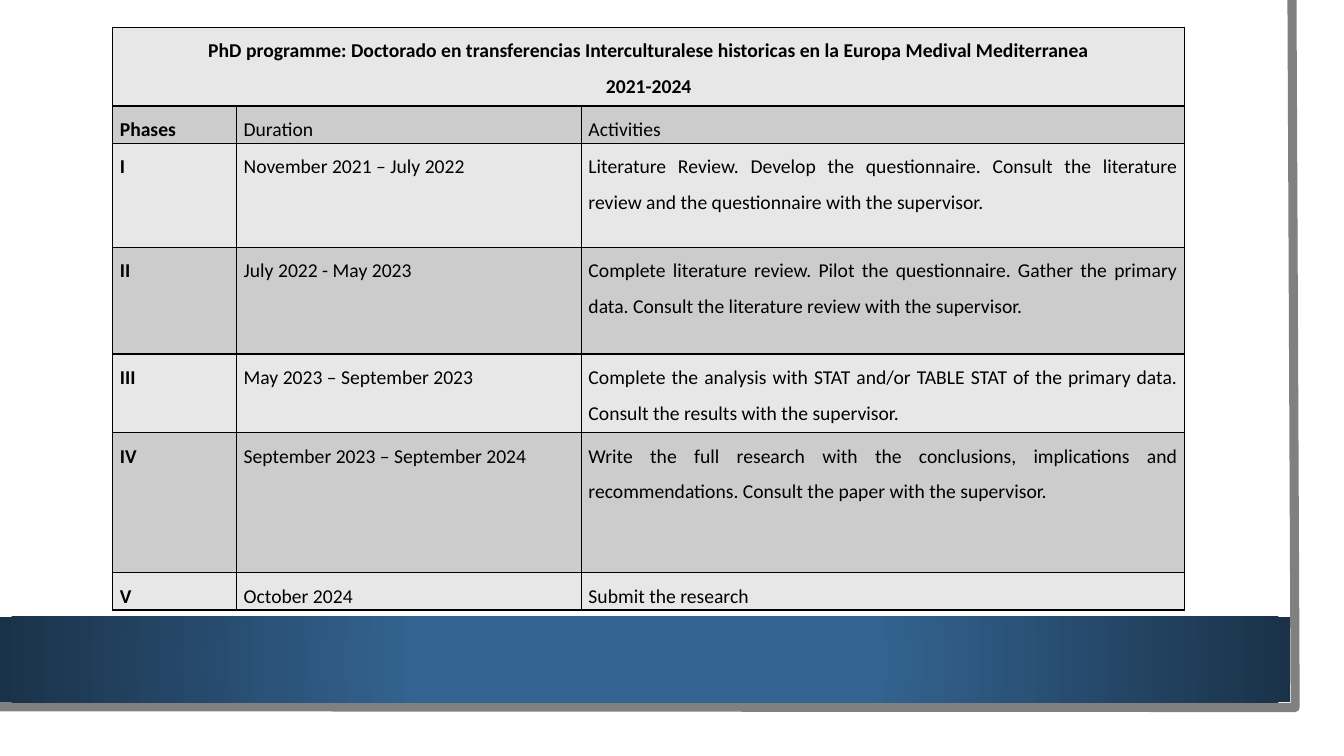
from lxml import etree
from pptx import Presentation
from pptx.dml.color import RGBColor
from pptx.enum.shapes import MSO_SHAPE
from pptx.enum.text import PP_ALIGN
from pptx.oxml import parse_xml
from pptx.oxml.ns import nsdecls, qn
from pptx.util import Cm, Pt

RECTANGLE = MSO_SHAPE.RECTANGLE
CENTER, JUSTIFY = PP_ALIGN.CENTER, PP_ALIGN.JUSTIFY

COLORS = {
    "page": "FFFFFF",
    "frame": "808080",
    "band_middle": "346492",
    "band_edge": "1A3249",
    "light_row": "E7E7E7",
    "dark_row": "CCCCCC",
    "ink": "000000",
}
RGB = {name: RGBColor.from_string(value) for name, value in COLORS.items()}

TITLE = (
    "PhD programme: Doctorado en transferencias Interculturalese historicas "
    "en la Europa Medival Mediterranea\n2021-2024"
)
ROWS = [
    (1.98, [TITLE, "", ""]),
    (0.94, ["Phases", "Duration", "Activities"]),
    (2.62, ["I", "November 2021 – July 2022",
            "Literature Review. Develop the questionnaire. Consult the literature "
            "review and the questionnaire with the supervisor."]),
    (2.69, ["II", "July 2022 - May 2023",
            "Complete literature review. Pilot the questionnaire. Gather the primary "
            "data. Consult the literature review with the supervisor."]),
    (1.98, ["III", "May 2023 – September 2023",
            "Complete the analysis with STAT and/or TABLE STAT of the primary data. "
            "Consult the results with the supervisor."]),
    (3.53, ["IV", "September 2023 – September 2024",
            "Write the full research with the conclusions, implications and "
            "recommendations. Consult the paper with the supervisor."]),
    (0.94, ["V", "October 2024", "Submit the research"]),
]
COLUMN_WIDTHS = [3.12, 8.69, 15.21]


def add_borders(cell):
    properties = cell._tc.get_or_add_tcPr()
    for position, side in enumerate(("lnL", "lnR", "lnT", "lnB")):
        border = parse_xml(
            f'<a:{side} {nsdecls("a")} w="12700"><a:solidFill>'
            f'<a:srgbClr val="{COLORS["ink"]}"/></a:solidFill></a:{side}>'
        )
        properties.insert(position, border)


prs = Presentation()
prs.slide_width, prs.slide_height = Cm(33.87), Cm(19.05)
slide = prs.slides.add_slide(prs.slide_layouts[6])
shapes = slide.shapes

# White page with a grey edge on the right and bottom
page = shapes.add_shape(RECTANGLE, 0, 0, Cm(33.27), Cm(18.47))
page.shadow.inherit = False
page.fill.solid()
page.fill.fore_color.rgb = RGB["page"]
page.line.fill.background()

outline = shapes.build_freeform(Cm(32.56), 0)
outline.add_line_segments(
    [(Cm(32.64), Cm(17.83)), (Cm(-0.08), Cm(17.81))], close=False
)
frame = outline.convert_to_shape()
frame.shadow.inherit = False
frame.fill.background()
frame.line.color.rgb = RGB["frame"]
frame.line.width = Pt(6.5)

# Blue band, shaded from its middle outwards
band = shapes.add_shape(RECTANGLE, 0, Cm(15.54), Cm(32.51), Cm(2.16))
band.shadow.inherit = False
band.line.fill.background()
band.fill.gradient()
band_stops = [(0.34, "band_middle"), (1, "band_edge")]
for stop, (position, color) in zip(band.fill.gradient_stops, band_stops):
    stop.position = position
    stop.color.rgb = RGB[color]
gradient = band._element.spPr.find(qn("a:gradFill"))
gradient.remove(gradient.find(qn("a:lin")))
radial = etree.SubElement(gradient, qn("a:path"), path="circle")
etree.SubElement(
    radial, qn("a:fillToRect"), {side: "50000" for side in "ltrb"}
)

# Programme schedule
schedule = shapes.add_table(
    len(ROWS), len(COLUMN_WIDTHS), Cm(2.84), Cm(0.69),
    Cm(sum(COLUMN_WIDTHS)), Cm(sum(height for height, _ in ROWS)),
).table
for column, width in zip(schedule.columns, COLUMN_WIDTHS):
    column.width = Cm(width)

for r, (height, texts) in enumerate(ROWS):
    schedule.rows[r].height = Cm(height)
    for c, text in enumerate(texts):
        cell = schedule.cell(r, c)
        cell.margin_left = cell.margin_right = Cm(0.18)
        cell.margin_top = cell.margin_bottom = 0
        cell.fill.solid()
        cell.fill.fore_color.rgb = RGB["dark_row" if r % 2 else "light_row"]
        add_borders(cell)
        cell.text_frame.text = text
        for paragraph in cell.text_frame.paragraphs:
            paragraph.alignment = JUSTIFY if r else CENTER
            paragraph.line_spacing = 1.5
            paragraph.font.name = "Calibri"
            paragraph.font.size = Pt(14)
            paragraph.font.bold = c == 0
            paragraph.font.color.rgb = RGB["ink"]
schedule.cell(0, 0).merge(schedule.cell(0, 2))

prs.save("out.pptx")
